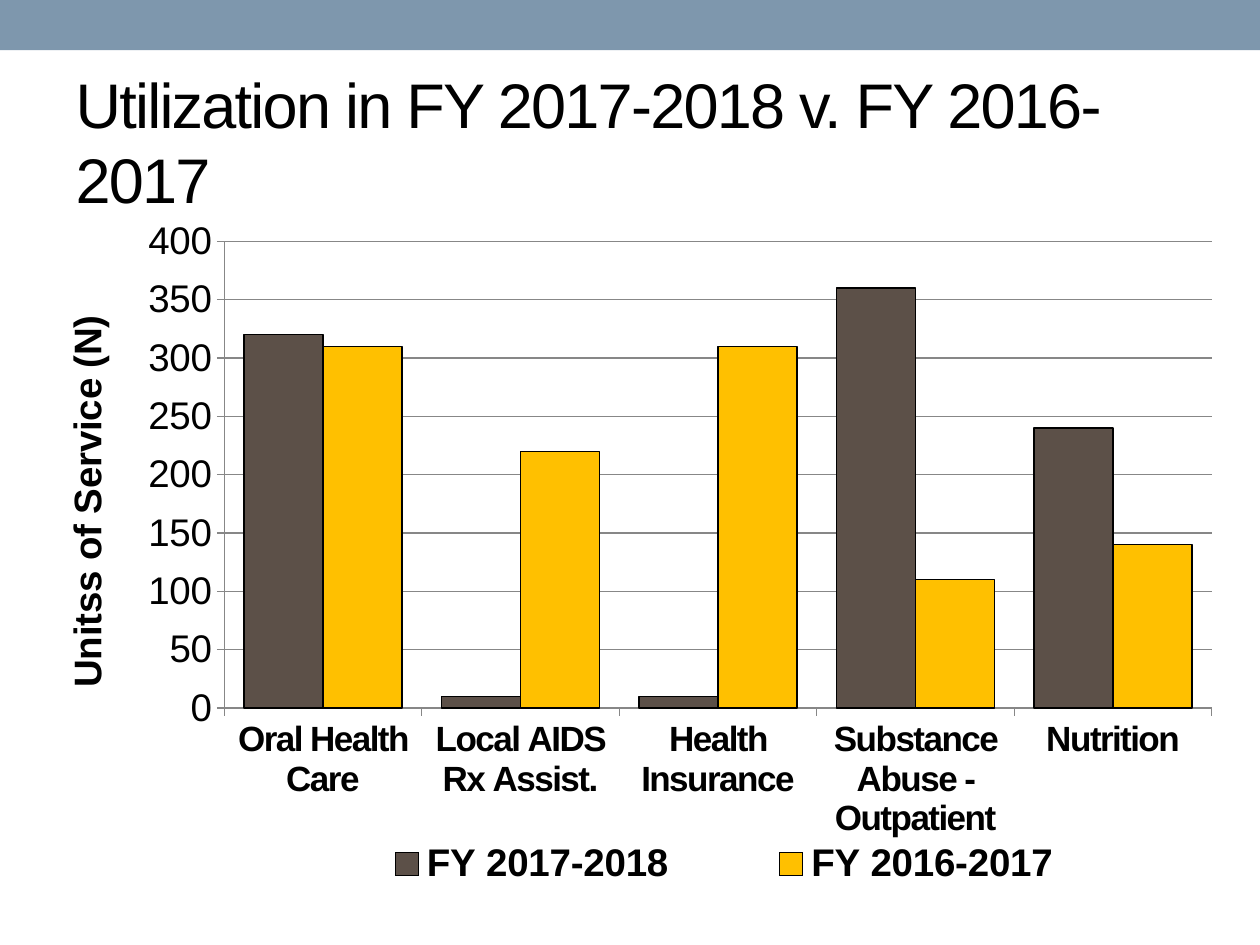
from dataclasses import dataclass

from lxml import etree
from pptx import Presentation, util as u
from pptx.chart.data import CategoryChartData
from pptx.dml.color import RGBColor
from pptx.enum import chart as charts, shapes, text
from pptx.oxml import ns


@dataclass(frozen=True)
class Theme:
    font: str = "Arial"
    ink: str = "000000"
    band: str = "7E97AD"
    rule: str = "878787"
    series: tuple = ("5C5048", "FFC000")
    title_size: int = 36
    chart_size: int = 22
    category_size: int = 20
    tracking: str = "-100"


class SlideBuilder:
    def __init__(self, deck, theme):
        self.theme = theme
        self.width, self.height = deck.slide_width, deck.slide_height
        self.slide = deck.slides.add_slide(deck.slide_layouts[5])

    def box(self, left, top, width, height):
        return (int(left * self.width), int(top * self.height),
                int(width * self.width), int(height * self.height))

    def style(self, font, size, bold=False):
        font.name = self.theme.font
        font.size = u.Pt(size)
        font.bold = bold
        font.color.rgb = RGBColor.from_string(self.theme.ink)

    def band(self, *shares):
        band = self.slide.shapes.add_shape(shapes.MSO_SHAPE.RECTANGLE, *self.box(*shares))
        band.shadow.inherit = False
        band.fill.solid()
        band.fill.fore_color.rgb = RGBColor.from_string(self.theme.band)
        band.line.fill.background()

    def title(self, wording, *shares):
        heading = self.slide.shapes.title
        heading.left, heading.top, heading.width, heading.height = self.box(*shares)
        frame = heading.text_frame
        frame.text = wording
        frame.word_wrap = True
        frame.vertical_anchor = text.MSO_ANCHOR.MIDDLE
        line = frame.paragraphs[0]
        line.alignment = text.PP_ALIGN.LEFT
        run = line.runs[0]
        self.style(run.font, self.theme.title_size)
        run.font._element.set("spc", self.theme.tracking)

    def place(self, part, index, **shares):
        for old in part.findall(ns.qn("c:layout")):
            part.remove(old)
        layout = etree.Element(ns.qn("c:layout"))
        manual = etree.SubElement(layout, ns.qn("c:manualLayout"))
        if "layoutTarget" not in shares:
            shares = {"xMode": "edge", "yMode": "edge", **shares}
        for name, value in shares.items():
            etree.SubElement(manual, ns.qn(f"c:{name}")).set("val", str(value))
        part.insert(index, layout)

    def axis(self, axis, size, bold=False):
        self.style(axis.tick_labels.font, size, bold)
        axis.major_tick_mark = charts.XL_TICK_MARK.OUTSIDE
        axis.format.line.color.rgb = RGBColor.from_string(self.theme.rule)

    def columns(self, categories, series, value_title, *shares):
        theme = self.theme
        data = CategoryChartData(number_format="#,##0")
        data.categories = categories
        for name, values in series.items():
            data.add_series(name, values)
        chart = self.slide.shapes.add_chart(
            charts.XL_CHART_TYPE.COLUMN_CLUSTERED, *self.box(*shares), data).chart
        self.style(chart.font, theme.chart_size)
        chart.has_title = False

        plot = chart.plots[0]
        plot.vary_by_categories = False
        plot.gap_width = 50
        plot.overlap = 0
        for group, color in zip(plot.series, theme.series):
            group.format.fill.solid()
            group.format.fill.fore_color.rgb = RGBColor.from_string(color)
            group.format.line.color.rgb = RGBColor.from_string(theme.ink)
            group.format.line.width = u.Pt(0.75)

        self.axis(chart.category_axis, theme.category_size, bold=True)
        chart.category_axis.tick_labels.font._element.set("spc", theme.tracking)
        value_axis = chart.value_axis
        self.axis(value_axis, theme.chart_size)
        value_axis.minimum_scale, value_axis.maximum_scale = 0, 400
        value_axis.major_unit = 50
        value_axis.tick_labels.number_format = "#,##0"
        value_axis.tick_labels.number_format_is_linked = False
        value_axis.has_major_gridlines = True
        value_axis.major_gridlines.format.line.color.rgb = RGBColor.from_string(theme.rule)
        caption = value_axis.axis_title
        caption.text_frame.text = value_title
        self.style(caption.text_frame.paragraphs[0].runs[0].font, theme.chart_size, bold=True)

        chart.has_legend = True
        legend = chart.legend
        legend.position = charts.XL_LEGEND_POSITION.BOTTOM
        legend.include_in_layout = False
        self.style(legend.font, theme.chart_size, bold=True)

        plot_area = chart._chartSpace.chart.plotArea
        self.place(plot_area, 0, layoutTarget="inner", xMode="edge", yMode="edge",
                   x=0.16, y=0.03, w=0.82, h=0.69)
        self.place(caption._element, 1, x=0.02, y=0.13)
        self.place(legend._element, 1, x=0.22, y=0.91, w=0.71, h=0.08)


def main():
    deck = Presentation()
    deck.slide_width, deck.slide_height = u.Inches(10), u.Inches(7.5)
    page = SlideBuilder(deck, Theme())
    page.band(0, 0, 1, 0.053)
    page.title("Utilization in FY 2017-2018 v. FY 2016-2017", 0.05, 0.077, 0.9, 0.144)
    page.columns(
        ["Oral Health Care", "Local AIDS Rx Assist.", "Health Insurance",
         "Substance Abuse - Outpatient", "Nutrition"],
        {"FY 2017-2018": (320, 10, 10, 360, 240),
         "FY 2016-2017": (310, 220, 310, 110, 140)},
        "Unitss of Service (N)", 0.025, 0.233, 0.956, 0.717)
    deck.save("out.pptx")


if __name__ == "__main__":
    main()
